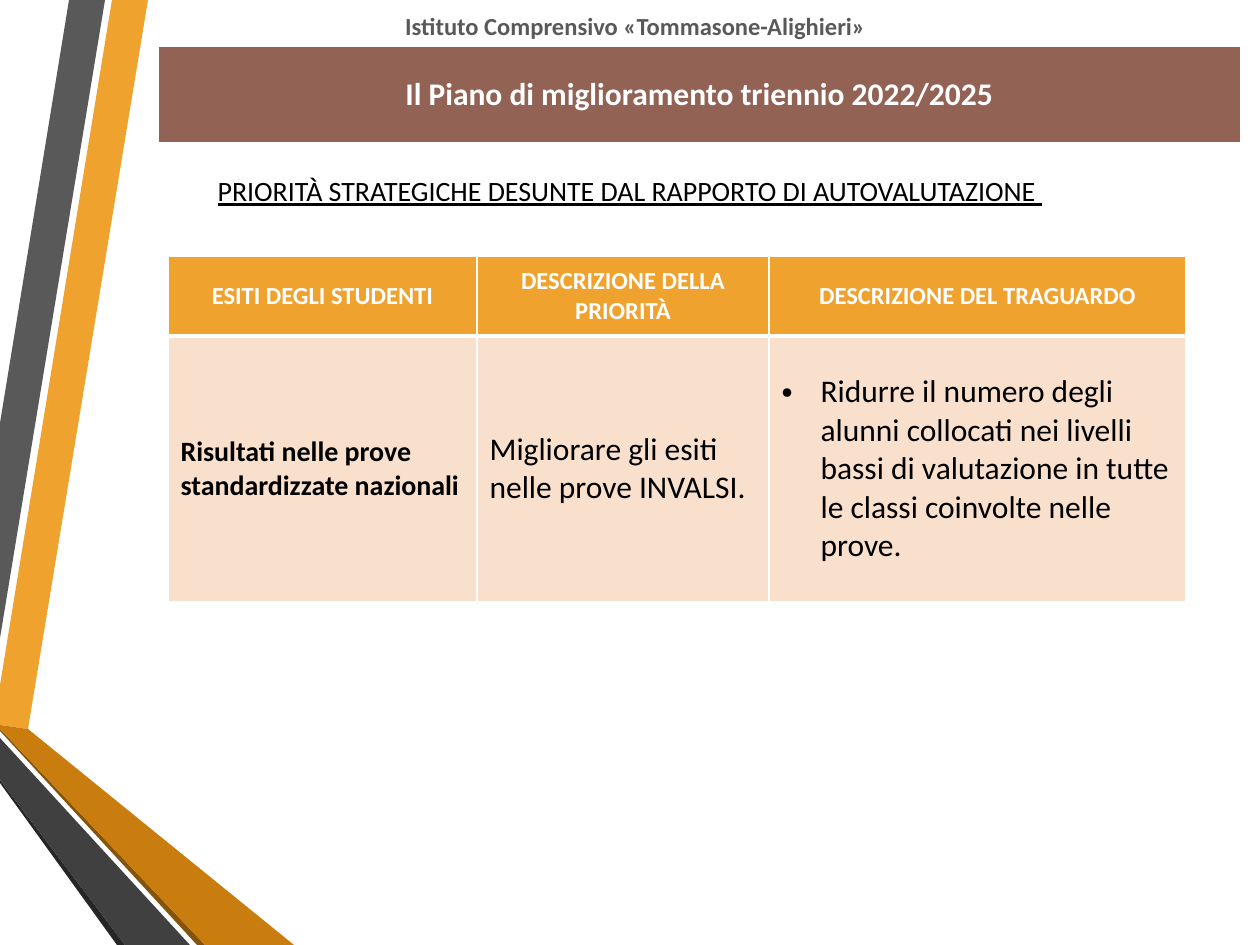
from dataclasses import dataclass

from lxml import etree
from pptx import Presentation
from pptx.dml.color import RGBColor
from pptx.enum.text import MSO_ANCHOR, MSO_AUTO_SIZE, PP_ALIGN
from pptx.oxml.ns import qn
from pptx.util import Emu, Pt

CENTER, LEFT = PP_ALIGN.CENTER, PP_ALIGN.LEFT
TOP, MIDDLE = MSO_ANCHOR.TOP, MSO_ANCHOR.MIDDLE
FIXED = MSO_AUTO_SIZE.NONE
SCALE = 914400 / 126
PLAIN = "{2D5ABB26-0587-4C30-8999-92F81FD0307C}"


@dataclass(frozen=True)
class Theme:
    font: str = "Calibri"
    white: str = "FFFFFF"
    black: str = "000000"
    gray: str = "595959"
    dark: str = "404040"
    shade: str = "262626"
    gold: str = "F0A22E"
    amber: str = "C87D0E"
    umber: str = "85540A"
    brown: str = "926255"
    peach: str = "F9E0CD"
    small: int = 14
    mid: int = 16
    large: int = 18


THEME = Theme()

RIBBONS = [
    (THEME.gold, [(0, 685), (0, 725), (28, 729), (148, 0), (112, 0)]),
    (THEME.gray, [(105, 0), (69, 0), (0, 423), (0, 638)]),
    (THEME.shade, [(0, 780), (0, 783), (117, 945), (125, 945)]),
    (THEME.umber, [(0, 729), (0, 731), (197, 945), (205, 945)]),
    (THEME.amber, [(0, 729), (205, 945), (294, 945), (28, 729), (0, 725)]),
    (THEME.dark, [(0, 780), (125, 945), (190, 945), (0, 738)]),
]

HEADS = ["ESITI DEGLI STUDENTI", "DESCRIZIONE DELLA PRIORITÀ", "DESCRIZIONE DEL TRAGUARDO"]
GOALS = [
    ("Risultati nelle prove standardizzate nazionali", THEME.mid, True, 0),
    ("Migliorare gli esiti nelle prove INVALSI.", THEME.large, False, 0),
    ("Ridurre il numero degli alunni collocati nei livelli bassi di valutazione "
     "in tutte le classi coinvolte nelle prove.", THEME.large, False, 39),
]


def px(num):
    return Emu(round(num * SCALE))


def rgb(code):
    return RGBColor.from_string(code)


def style(para, size, color, bold=False, align=CENTER, under=None):
    para.alignment = align
    font = para.font
    font.name, font.size, font.bold, font.underline = THEME.font, Pt(size), bold, under
    font.color.rgb = rgb(color)


def add_ribbon(slide, color, points):
    pen = slide.shapes.build_freeform(*points[0], scale=SCALE)
    pen.add_line_segments(points[1:], close=True)
    shape = pen.convert_to_shape()
    shape.shadow.inherit = False
    shape.fill.solid()
    shape.fill.fore_color.rgb = rgb(color)
    shape.line.fill.background()


def fill_text(shape, box, text, size, color, **look):
    shape.left, shape.top, shape.width, shape.height = map(px, box)
    frame = shape.text_frame
    frame.word_wrap = True
    frame.auto_size = FIXED
    frame.vertical_anchor = TOP
    frame.text = text
    style(frame.paragraphs[0], size, color, **look)


def add_grid(slide, left, top, cols, rows):
    box = map(px, (left, top, sum(cols), sum(rows)))
    table = slide.shapes.add_table(len(rows), len(cols), *box).table
    table.horz_banding = False
    table._tbl.tblPr.find(qn("a:tableStyleId")).text = PLAIN
    for col, width in zip(table.columns, cols):
        col.width = px(width)
    for row, height in zip(table.rows, rows):
        row.height = px(height)
    return table


def fill_cell(cell, text, fill, size, color, indent=0, **look):
    cell.text = text
    cell.vertical_anchor = MIDDLE
    cell.fill.solid()
    cell.fill.fore_color.rgb = rgb(fill)
    para = cell.text_frame.paragraphs[0]
    if indent:
        add_bullet(para, indent)
    style(para, size, color, **look)


def add_edges(cell, base):
    props = cell._tc.get_or_add_tcPr()
    for side, width in (("L", 1), ("R", 1), ("T", 1), ("B", base)):
        line = etree.SubElement(props, qn(f"a:ln{side}"), w=str(Pt(width)))
        solid = etree.SubElement(line, qn("a:solidFill"))
        etree.SubElement(solid, qn("a:srgbClr"), val=THEME.white)


def add_bullet(para, indent):
    props = para._p.get_or_add_pPr()
    props.set("marL", str(px(indent)))
    props.set("indent", str(-px(indent)))
    etree.SubElement(props, qn("a:buFont"), typeface="Arial")
    etree.SubElement(props, qn("a:buChar"), char="•")


def add_goals(slide):
    table = add_grid(slide, 168, 256, [309, 292, 417], [80, 266])
    for col, (head, (goal, size, bold, indent)) in enumerate(zip(HEADS, GOALS)):
        top, body = table.cell(0, col), table.cell(1, col)
        add_edges(top, 3)
        fill_cell(top, head, THEME.gold, THEME.small, THEME.white, bold=True)
        add_edges(body, 1)
        fill_cell(body, goal, THEME.peach, size, THEME.black, indent, bold=bold, align=LEFT)


def main():
    deck = Presentation()
    deck.slide_width, deck.slide_height = px(1260), px(945)
    slide = deck.slides.add_slide(deck.slide_layouts[5])
    for color, points in RIBBONS:
        add_ribbon(slide, color, points)
    add_goals(slide)
    school = slide.shapes.add_textbox(0, 0, 0, 0)
    fill_text(school, (144, 5, 983, 43), "Istituto Comprensivo «Tommasone-Alighieri»",
              THEME.small, THEME.gray, bold=True)
    fill_text(slide.shapes.title, (114, 167, 1032, 47),
              "PRIORITÀ STRATEGICHE DESUNTE DAL RAPPORTO DI AUTOVALUTAZIONE ",
              THEME.mid, THEME.black, under=True)
    banner = add_grid(slide, 159, 47, [1081], [95])
    fill_cell(banner.cell(0, 0), "Il Piano di miglioramento triennio 2022/2025",
              THEME.brown, THEME.large, THEME.white, bold=True)
    deck.save("out.pptx")


if __name__ == "__main__":
    main()
